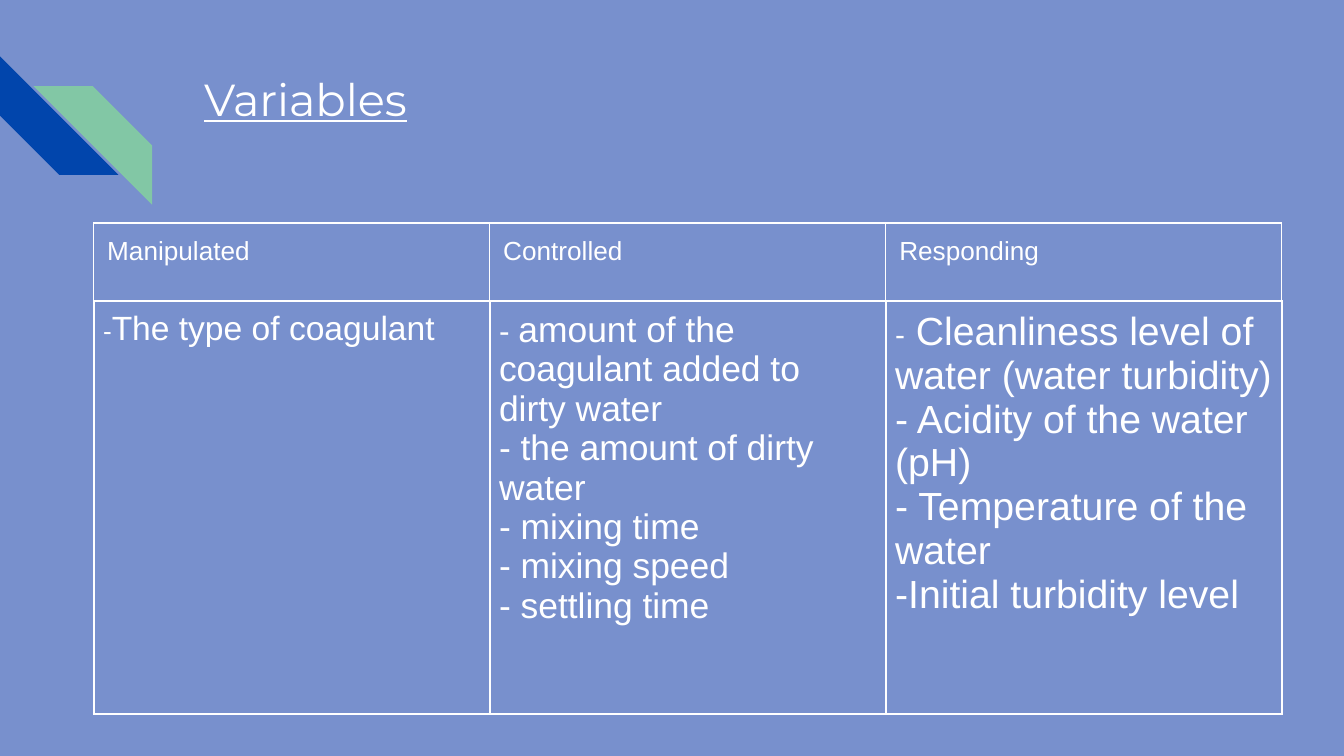
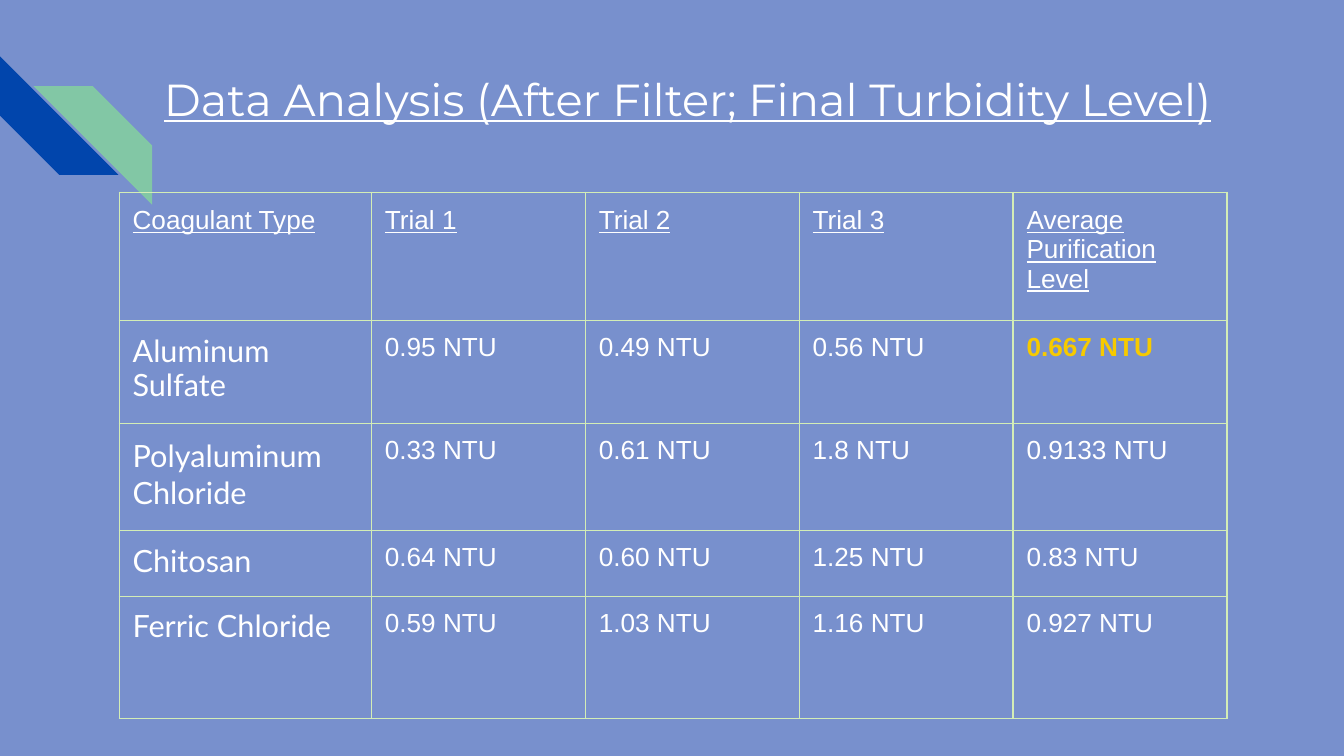
from dataclasses import dataclass

from lxml.etree import SubElement
from pptx import Presentation
from pptx.dml.color import RGBColor
from pptx.enum.shapes import MSO_SHAPE
from pptx.enum.text import MSO_ANCHOR, MSO_AUTO_SIZE, PP_ALIGN
from pptx.oxml.ns import qn
from pptx.slide import Slide
from pptx.table import _Cell
from pptx.util import Pt

BACKGROUND = "7890CD"
WHITE = "FFFFFF"
PALE_GREEN = "D3EDB6"
GOLD = "F7CA00"
BODY_FONT = "Arial"
TITLE_FONT = "Montserrat"
NAME_FONT = "Lato"


@dataclass(frozen=True)
class Stripe:
    left: float
    top: float
    color: str
    rotation: float = 0
    flipped: bool = False


@dataclass(frozen=True)
class CellText:
    lines: tuple[str, ...]
    size: float = 14
    font: str = BODY_FONT
    color: str = WHITE
    bold: bool = False
    underline: bool = False
    spacing: float = 1
    after: float = 0
    margin: float = 7.2
    dash: str = ""
    dash_size: float = 14


@dataclass(frozen=True)
class Border:
    color: str
    width: float = 0.75
    bottom: float = 0.75


@dataclass(frozen=True)
class Grid:
    left: float
    top: float
    columns: tuple[float, ...]
    rows: tuple[float, ...]
    borders: tuple[Border, ...]
    cells: tuple[tuple[CellText, ...], ...]


STRIPES = (
    Stripe(0, 30.2, "0145AC", rotation=270),
    Stripe(18, 46.2, "82C7A5", flipped=True),
)
STRIPE_SIZE = 63.5


def rgb(color: str) -> RGBColor:
    return RGBColor.from_string(color)


def add_stripe(slide: Slide, stripe: Stripe) -> None:
    sp = slide.shapes.add_shape(
        MSO_SHAPE.DIAGONAL_STRIPE,
        Pt(stripe.left), Pt(stripe.top), Pt(STRIPE_SIZE), Pt(STRIPE_SIZE),
    )
    sp.adjustments[0] = 0.5
    sp.rotation = stripe.rotation
    sp.shadow.inherit = False
    sp.fill.solid()
    sp.fill.fore_color.rgb = rgb(stripe.color)
    sp.line.fill.background()
    if stripe.flipped:
        sp.element.spPr.find(qn("a:xfrm")).set("flipH", "1")


def add_slide(prs: Presentation, title: str, left: float, width: float,
              height: float) -> Slide:
    slide = prs.slides.add_slide(prs.slide_layouts.get_by_name("Title Only"))
    for stripe in STRIPES:
        add_stripe(slide, stripe)
    sp = slide.shapes.title
    sp.left, sp.top, sp.width, sp.height = Pt(left), Pt(31), Pt(width), Pt(height)
    tf = sp.text_frame
    tf.text = title
    tf.word_wrap = True
    tf.auto_size = MSO_AUTO_SIZE.NONE
    tf.vertical_anchor = MSO_ANCHOR.TOP
    tf.margin_left = tf.margin_right = tf.margin_top = tf.margin_bottom = Pt(7.2)
    p = tf.paragraphs[0]
    p.alignment = PP_ALIGN.LEFT
    p.font.name = TITLE_FONT
    p.font.size = Pt(24)
    p.font.underline = True
    p.font.color.rgb = rgb(WHITE)
    return slide


def set_borders(cell: _Cell, border: Border) -> None:
    tcPr = cell._tc.get_or_add_tcPr()
    for index, side in enumerate("LRTB"):
        width = border.bottom if side == "B" else border.width
        ln = SubElement(tcPr, qn(f"a:ln{side}"), w=str(int(Pt(width))))
        fill = SubElement(ln, qn("a:solidFill"))
        SubElement(fill, qn("a:srgbClr"), val=border.color)
        tcPr.insert(index, ln)


def fill_cell(cell: _Cell, text: CellText) -> None:
    cell.fill.background()
    cell.vertical_anchor = MSO_ANCHOR.TOP
    cell.margin_left = cell.margin_right = Pt(text.margin)
    cell.margin_top = cell.margin_bottom = Pt(text.margin)
    tf = cell.text_frame
    for index, line in enumerate(text.lines):
        p = tf.add_paragraph() if index else tf.paragraphs[0]
        p.line_spacing = text.spacing
        p.space_after = Pt(text.after)
        p.font.name = text.font
        p.font.size = Pt(text.size)
        p.font.bold = text.bold
        p.font.underline = text.underline
        p.font.color.rgb = rgb(text.color)
        if text.dash and index == 0:
            r = p.add_run()
            r.text = text.dash
            r.font.size = Pt(text.dash_size)
        p.add_run().text = line


def add_grid(slide: Slide, grid: Grid) -> None:
    table = slide.shapes.add_table(
        len(grid.rows), len(grid.columns), Pt(grid.left), Pt(grid.top),
        Pt(sum(grid.columns)), Pt(sum(grid.rows)),
    ).table
    table.first_row = table.horz_banding = False
    for column, width in zip(table.columns, grid.columns):
        column.width = Pt(width)
    for row, height, border, texts in zip(
            table.rows, grid.rows, grid.borders, grid.cells):
        row.height = Pt(height)
        for cell, text in zip(row.cells, texts):
            fill_cell(cell, text)
            set_borders(cell, border)


def variables_grid() -> Grid:
    headings = ("Manipulated", "Controlled", "Responding")
    body = (
        CellText(("The type of coagulant",), 18, margin=5, dash="-"),
        CellText((
            "amount of the coagulant added to dirty water",
            "- the amount of dirty water",
            "- mixing time",
            "- mixing speed",
            "- settling time",
        ), 19, margin=5, dash="- ", dash_size=17),
        CellText((
            " Cleanliness level of water (water turbidity)",
            "- Acidity of the water (pH)",
            "- Temperature of the water",
            "-Initial turbidity level",
        ), 21, margin=5, dash="-", dash_size=16),
    )
    return Grid(
        50.2, 119.5, (212.2,) * 3, (41.8, 221.2),
        (Border(WHITE, bottom=1), Border(WHITE, 1, 1)),
        (tuple(CellText((heading,)) for heading in headings), body),
    )


def turbidity_grid() -> Grid:
    headings = ("Coagulant Type", "Trial 1", "Trial 2", "Trial 3",
                "Average Purification Level")
    results = (
        ("Aluminum Sulfate", 0.95, ("0.95", "0.49", "0.56", "0.667")),
        ("Polyaluminum Chloride", 1, ("0.33", "0.61", "1.8", "0.9133")),
        ("Chitosan", 0.95, ("0.64", "0.60", "1.25", "0.83")),
        ("Ferric Chloride", 0.95, ("0.59", "1.03", "1.16", "0.927")),
    )
    best = "0.667"
    cells = [tuple(CellText((heading,), underline=True) for heading in headings)]
    for name, spacing, levels in results:
        name_cell = CellText((name,), 16.4, NAME_FONT, spacing=spacing)
        level_cells = (
            CellText((f"{level} NTU",), color=GOLD if level == best else WHITE,
                     bold=level == best, spacing=0.95, after=12)
            for level in levels
        )
        cells.append((name_cell, *level_cells))
    rows = (68.8, 55.2, 57.4, 35.2, 65.5)
    return Grid(
        63.8, 103, (135.2,) + (114.6,) * 4, rows,
        (Border(PALE_GREEN),) * len(rows), tuple(cells),
    )


def main() -> None:
    prs = Presentation()
    prs.slide_width, prs.slide_height = Pt(720), Pt(405)
    background = prs.slide_master.background.fill
    background.solid()
    background.fore_color.rgb = rgb(BACKGROUND)

    slide = add_slide(prs, "Variables", 102.2, 554.4, 72)
    add_grid(slide, variables_grid())

    slide = add_slide(
        prs, "Data Analysis (After Filter; Final Turbidity Level)",
        80.6, 582.5, 96.5)
    add_grid(slide, turbidity_grid())

    prs.save("out.pptx")


if __name__ == "__main__":
    main()
